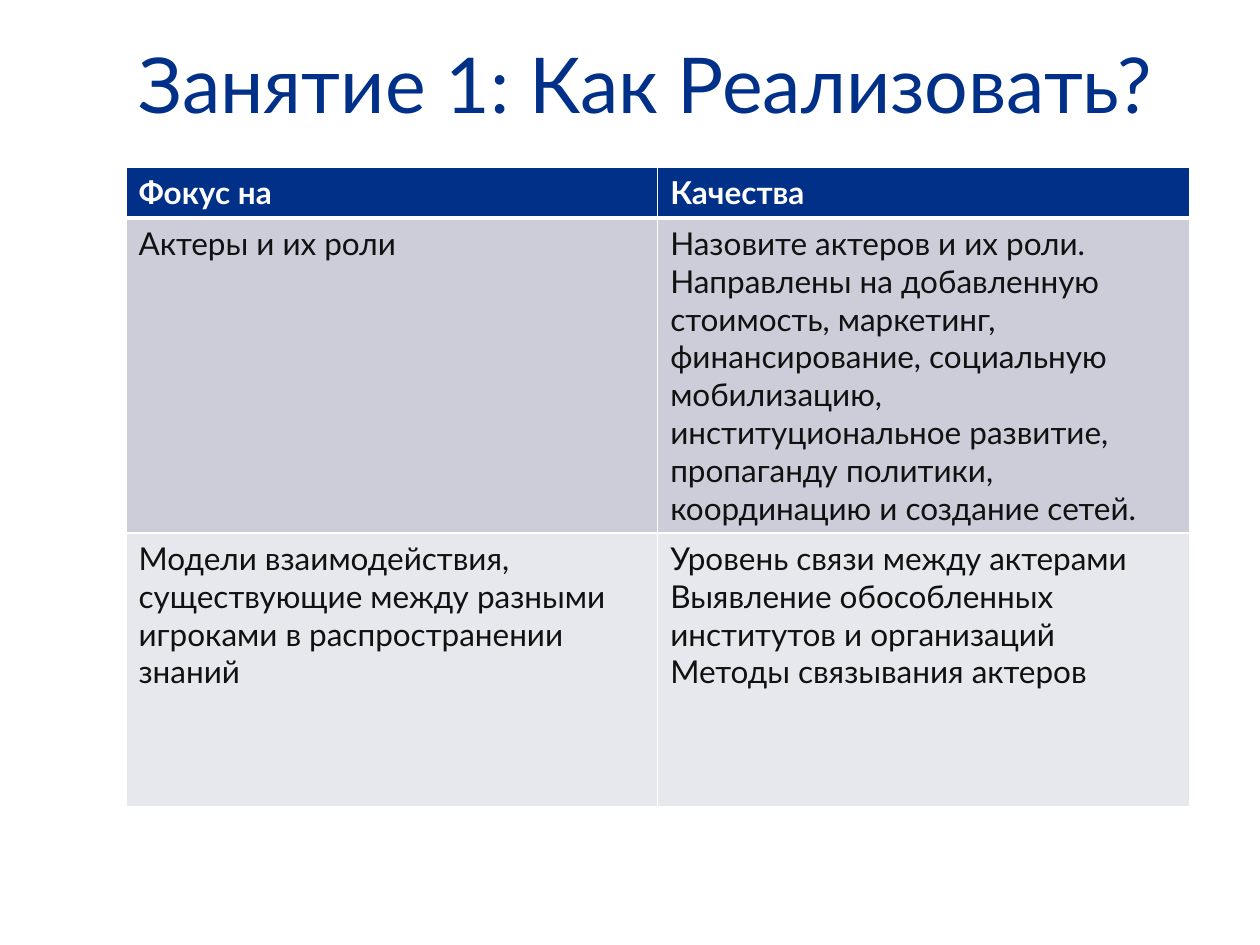
from dataclasses import dataclass

from lxml.etree import SubElement
from pptx import Presentation
from pptx.dml.color import RGBColor as Color
from pptx.enum.text import MSO_ANCHOR as Anchor, PP_ALIGN as Align
from pptx.oxml.ns import qn
from pptx.util import Inches, Pt


@dataclass(frozen=True)
class Theme:
    """Colours, font and type sizes of the slide."""
    font: str = "Lato"
    navy: str = "003087"
    white: str = "FFFFFF"
    ink: str = "111111"
    bands: tuple = ("CCCDD9", "E7E8ED")
    title_size: int = 44
    table_size: int = 18
    border: int = 1
    header_rule: int = 3


THEME = Theme()
TITLE = "Занятие 1: Как Реализовать?"
ROWS = [
    ("Фокус на", "Качества"),
    ("Актеры и их роли",
     "Назовите актеров и их роли.\n"
     "Направлены на добавленную стоимость, маркетинг, финансирование, "
     "социальную мобилизацию, институциональное развитие, "
     "пропаганду политики, координацию и создание сетей."),
    ("Модели взаимодействия, существующие между разными игроками "
     "в распространении знаний",
     "Уровень связи между актерами\n"
     "Выявление обособленных институтов и организаций\n"
     "Методы связывания актеров"),
]


def format_text(text_frame, size, color, bold=False):
    """Apply the theme font to every run, aligned left."""
    for paragraph in text_frame.paragraphs:
        paragraph.alignment = Align.LEFT
        for run in paragraph.runs:
            run.font.name = THEME.font
            run.font.size = Pt(size)
            run.font.bold = bold
            run.font.color.rgb = Color.from_string(color)


def add_borders(cell, bottom_width, top_width):
    """Draw white lines on the four sides of a cell."""
    properties = cell._tc.get_or_add_tcPr()
    widths = {"L": THEME.border, "R": THEME.border, "T": top_width, "B": bottom_width}
    for side, width in widths.items():
        line = SubElement(properties, qn(f"a:ln{side}"), w=str(Pt(width)))
        fill = SubElement(line, qn("a:solidFill"))
        SubElement(fill, qn("a:srgbClr"), val=THEME.white)


def place_title(slide, left, top, width, height):
    """Place and format the title placeholder in its box."""
    title = slide.shapes.title
    title.left, title.top, title.width, title.height = left, top, width, height
    title.text_frame.text = TITLE
    title.text_frame.vertical_anchor = Anchor.MIDDLE
    format_text(title.text_frame, THEME.title_size, THEME.navy)


def place_table(slide, left, top, width, height):
    """Fill the box with a header row and equal body rows."""
    header_height = Inches(0.4)
    body_height = (height - header_height) // (len(ROWS) - 1)
    table = slide.shapes.add_table(len(ROWS), len(ROWS[0]), left, top, width, height).table
    for row_index, texts in enumerate(ROWS):
        is_header = row_index == 0
        table.rows[row_index].height = header_height if is_header else body_height
        fill_color = THEME.navy if is_header else THEME.bands[(row_index - 1) % 2]
        text_color = THEME.white if is_header else THEME.ink
        bottom_width = THEME.header_rule if is_header else THEME.border
        top_width = THEME.header_rule if row_index == 1 else THEME.border
        for column_index, text in enumerate(texts):
            cell = table.cell(row_index, column_index)
            add_borders(cell, bottom_width, top_width)
            cell.fill.solid()
            cell.fill.fore_color.rgb = Color.from_string(fill_color)
            cell.text_frame.text = text
            format_text(cell.text_frame, THEME.table_size, text_color, is_header)


def main():
    """Build the slide and save it."""
    presentation = Presentation()
    presentation.slide_width, presentation.slide_height = Inches(10), Inches(7.5)
    slide = presentation.slides.add_slide(presentation.slide_layouts[5])
    left, width = Inches(1), Inches(8.44)
    place_title(slide, left, Inches(0.14), width, Inches(1.03))
    place_table(slide, left, Inches(1.33), width, Inches(4.74))
    presentation.save("out.pptx")


if __name__ == "__main__":
    main()
